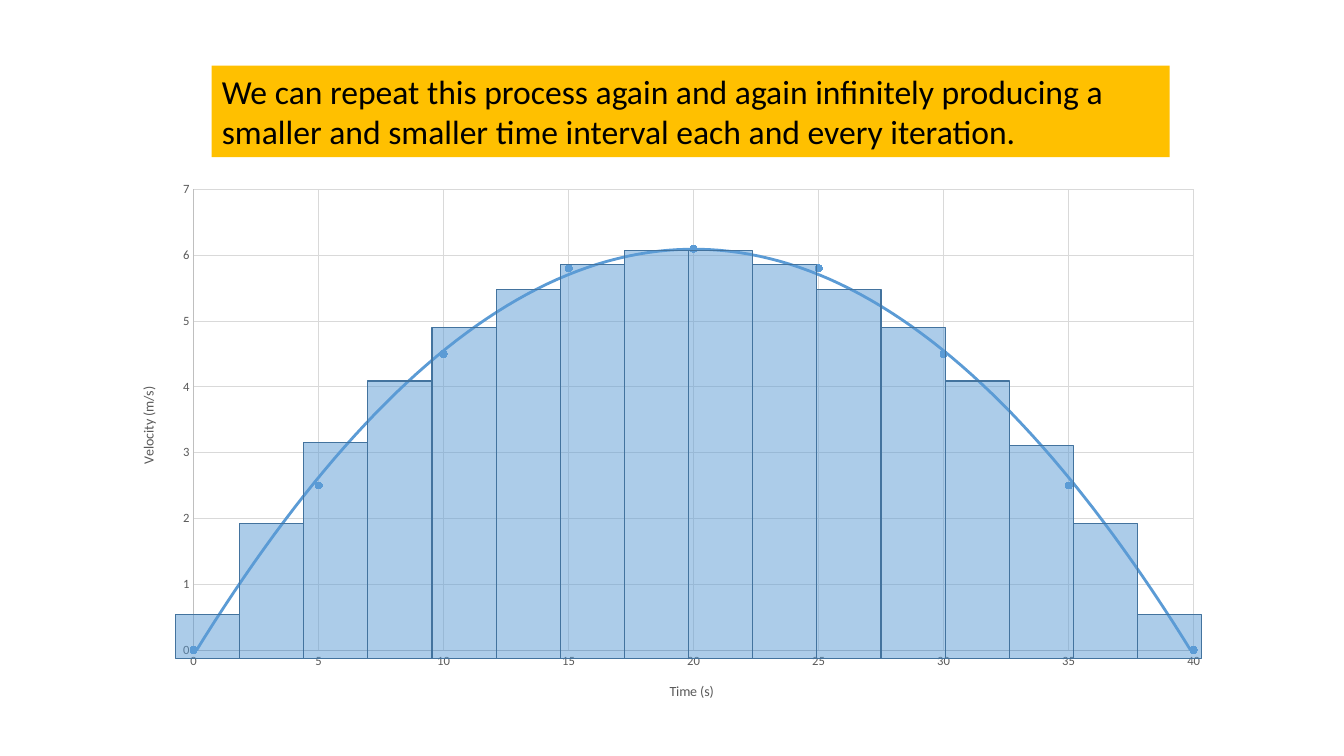
import pptx
import pptx.chart.data
import pptx.dml.color
import pptx.enum.chart
import pptx.enum.shapes
import pptx.enum.text
import pptx.oxml
import pptx.oxml.ns
import pptx.util
from lxml import etree

MESSAGE = ("We can repeat this process again and again infinitely producing a "
           "smaller and smaller time interval each and every iteration.")
TIMES = [0, 5, 10, 15, 20, 25, 30, 35, 40]
VELOCITIES = [0, 2.5, 4.5, 5.8, 6.1, 5.8, 4.5, 2.5, 0]
BAR_HEIGHTS = [0.43, 1.34, 2.14, 2.75, 3.28, 3.66, 3.91, 4.04,
               4.04, 3.91, 3.66, 3.28, 2.75, 2.11, 1.34, 0.43]
COLORS = {"banner": "FFC000", "text": "000000", "curve": "5B9BD5", "edge": "43739E",
          "label": "595959", "axis": "BFBFBF", "grid": "D9D9D9"}
FONT = "Calibri"
SLIDE = (13.33, 7.5)
BANNER = (2.1, 0.65, 9.5, 0.91)
GRAPH = (1.18, 1.7, 10.95, 5.45)
PLOT = {"x": 1.92, "y": 1.88, "w": 9.92, "h": 4.57}
BARS_LEFT, BARS_RIGHT, BARS_BOTTOM = 1.74, 11.92, 6.53


def inches(lengths):
    return [pptx.util.Inches(length) for length in lengths]


def color(name):
    return pptx.dml.color.RGBColor.from_string(COLORS[name])


def paint(fill, name):
    fill.solid()
    fill.fore_color.rgb = color(name)


def stroke(line, name, width):
    paint(line.fill, name)
    line.width = pptx.util.Pt(width)


def style(font, size, name):
    font.name = FONT
    font.size = pptx.util.Pt(size)
    font.bold = False
    font.color.rgb = color(name)


def chart_xml(body):
    return pptx.oxml.parse_xml(body.replace(
        ">", f' {pptx.oxml.ns.nsdecls("c", "a")}>', 1))


def add_banner(slide):
    banner = slide.shapes.title
    banner.left, banner.top, banner.width, banner.height = inches(BANNER)
    paint(banner.fill, "banner")
    frame = banner.text_frame
    frame.text = MESSAGE
    frame.word_wrap = True
    frame.auto_size = pptx.enum.text.MSO_AUTO_SIZE.NONE
    frame.vertical_anchor = pptx.enum.text.MSO_ANCHOR.TOP
    sentence = frame.paragraphs[0]
    sentence.alignment = pptx.enum.text.PP_ALIGN.LEFT
    sentence.line_spacing = 1.0
    sentence.space_before = pptx.util.Pt(0)
    style(sentence.runs[0].font, 24, "text")


def format_axis(axis, title, maximum, step):
    axis.minimum_scale, axis.maximum_scale, axis.major_unit = 0, maximum, step
    axis.major_tick_mark = axis.minor_tick_mark = pptx.enum.chart.XL_TICK_MARK.NONE
    axis.has_major_gridlines = True
    stroke(axis.major_gridlines.format.line, "grid", 0.75)
    stroke(axis.format.line, "axis", 0.75)
    style(axis.tick_labels.font, 9, "label")
    axis.tick_labels.number_format = "General"
    axis.tick_labels.number_format_is_linked = False
    axis.axis_title.text_frame.text = title
    style(axis.axis_title.text_frame.paragraphs[0].runs[0].font, 10, "label")


def place_plot(chart):
    shares = {"x": (PLOT["x"] - GRAPH[0]) / GRAPH[2], "y": (PLOT["y"] - GRAPH[1]) / GRAPH[3],
              "w": PLOT["w"] / GRAPH[2], "h": PLOT["h"] / GRAPH[3]}
    modes = '<c:xMode val="edge"/><c:yMode val="edge"/>'
    sizes = "".join(f'<c:{side} val="{share:.4f}"/>' for side, share in shares.items())
    plot_area = chart._chartSpace.chart.plotArea
    for layout in plot_area.findall(pptx.oxml.ns.qn("c:layout")):
        plot_area.remove(layout)
    plot_area.insert(0, chart_xml(
        f'<c:layout><c:manualLayout><c:layoutTarget val="inner"/>{modes}{sizes}'
        '</c:manualLayout></c:layout>'))


def add_trend(series):
    trend = chart_xml(
        '<c:trendline><c:spPr><a:ln w="25400" cap="rnd"><a:solidFill>'
        f'<a:srgbClr val="{COLORS["curve"]}"/></a:solidFill></a:ln></c:spPr>'
        '<c:trendlineType val="poly"/><c:order val="2"/>'
        '<c:dispRSqr val="0"/><c:dispEq val="0"/></c:trendline>')
    series._element.find(pptx.oxml.ns.qn("c:xVal")).addprevious(trend)


def add_graph(slide):
    data = pptx.chart.data.XyChartData()
    motion = data.add_series("Series 1")
    for time, velocity in zip(TIMES, VELOCITIES):
        motion.add_data_point(time, velocity)
    chart = slide.shapes.add_chart(
        pptx.enum.chart.XL_CHART_TYPE.XY_SCATTER, *inches(GRAPH), data).chart
    chart.has_legend = chart.has_title = False
    style(chart.font, 10, "text")
    chart.plots[0].vary_by_categories = False
    format_axis(chart.category_axis, "Time (s)", 40, 5)
    format_axis(chart.value_axis, "Velocity (m/s)", 7, 1)
    series = chart.plots[0].series[0]
    series.smooth = False
    series.format.line.fill.background()
    series.marker.style = pptx.enum.chart.XL_MARKER_STYLE.CIRCLE
    series.marker.size = 5
    paint(series.marker.format.fill, "curve")
    stroke(series.marker.format.line, "curve", 0.75)
    add_trend(series)
    place_plot(chart)


def add_bars(slide):
    width = (BARS_RIGHT - BARS_LEFT) / len(BAR_HEIGHTS)
    for index, height in enumerate(BAR_HEIGHTS):
        bar = slide.shapes.add_shape(
            pptx.enum.shapes.MSO_SHAPE.RECTANGLE,
            *inches((BARS_LEFT + index * width, BARS_BOTTOM - height, width, height)))
        bar.shadow.inherit = False
        paint(bar.fill, "curve")
        stroke(bar.line, "edge", 0.75)
        tint = bar._element.spPr.find(
            f'{pptx.oxml.ns.qn("a:solidFill")}/{pptx.oxml.ns.qn("a:srgbClr")}')
        etree.SubElement(tint, pptx.oxml.ns.qn("a:alpha")).set("val", "50000")


def main():
    deck = pptx.Presentation()
    deck.slide_width, deck.slide_height = inches(SLIDE)
    slide = deck.slides.add_slide(deck.slide_layouts[5])
    add_banner(slide)
    add_graph(slide)
    add_bars(slide)
    deck.save("out.pptx")


if __name__ == "__main__":
    main()
